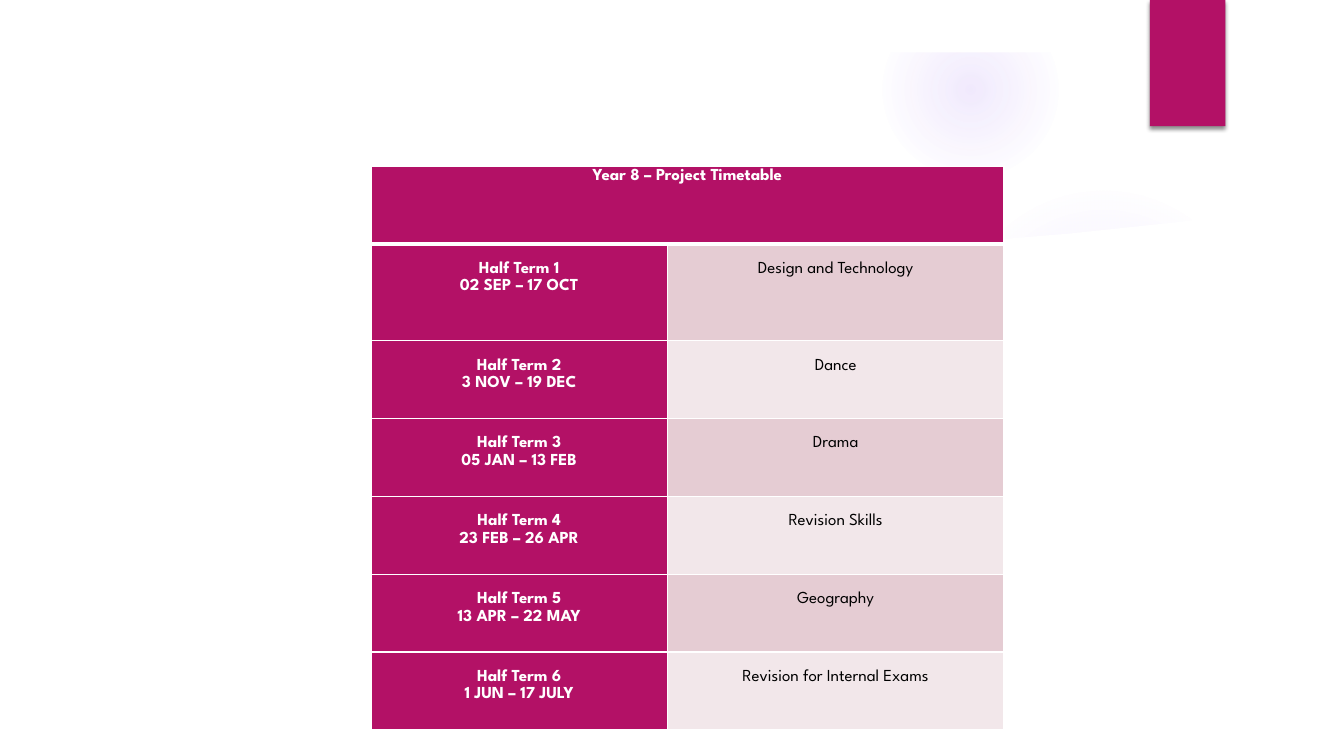
from dataclasses import dataclass

from pptx import Presentation
from pptx.dml.color import RGBColor as RGB
from pptx.enum.shapes import MSO_SHAPE as SHAPE
from pptx.enum.text import PP_ALIGN as ALIGN
from pptx.oxml import parse_xml
from pptx.oxml.ns import nsdecls
from pptx.util import Cm, Pt


@dataclass(frozen=True)
class Theme:
    font: str = "League Spartan"
    size: int = 12
    spacing: float = 1.15
    accent: str = "B31166"
    glow: str = "9B6BF2"
    white: str = "FFFFFF"
    black: str = "000000"
    bands: tuple = ("E5CCD3", "F2E7EA")


class TimetableSlide:
    def __init__(self, prs, theme):
        self.theme = theme
        self.slide = prs.slides.add_slide(prs.slide_layouts[6])
        self.shapes = self.slide.shapes

    def paint(self, s, color):
        s.shadow.inherit = False
        s.fill.solid()
        s.fill.fore_color.rgb = RGB.from_string(color)
        s.line.fill.background()
        return s

    def shape(self, kind, x, y, w, h, color):
        s = self.shapes.add_shape(kind, Cm(x), Cm(y), Cm(w), Cm(h))
        return self.paint(s, color)

    def glow(self, x, y, size, stops):
        s = self.shape(SHAPE.OVAL, x, y, size, size, self.theme.white)
        gs = "".join(
            f'<a:gs pos="{pos * 1000}"><a:srgbClr val="{self.theme.glow}">'
            f'<a:alpha val="{alpha * 1000}"/></a:srgbClr></a:gs>'
            for pos, alpha in stops
        )
        grad = parse_xml(
            f'<a:gradFill {nsdecls("a")}><a:gsLst>{gs}</a:gsLst><a:path path="circle">'
            '<a:fillToRect l="50000" t="50000" r="50000" b="50000"/></a:path></a:gradFill>'
        )
        solid = s.fill._xPr.solidFill
        solid.getparent().replace(solid, grad)

    def panel(self, points):
        start, *rest = [(Cm(x), Cm(y)) for x, y in points]
        builder = self.shapes.build_freeform(*start)
        builder.add_line_segments(rest)
        self.paint(builder.convert_to_shape(), self.theme.white)

    def frame(self, w, h, border):
        s = self.shape(SHAPE.FRAME, 0, 0, w, h, self.theme.white)
        s.adjustments[0] = border / min(w, h)

    def tab(self, x, y, w, h):
        s = self.shape(SHAPE.RECTANGLE, x, y, w, h, self.theme.accent)
        effects = s._element.spPr.find("{*}effectLst")
        effects.append(parse_xml(
            f'<a:outerShdw {nsdecls("a")} blurRad="{Pt(3)}" dist="{Pt(2)}" dir="5400000">'
            f'<a:srgbClr val="{self.theme.black}"><a:alpha val="45000"/></a:srgbClr></a:outerShdw>'
        ))

    def cell(self, cell, text, fill, color, bold, top=0.0, rules=(1, 1)):
        cell.fill.solid()
        cell.fill.fore_color.rgb = RGB.from_string(fill)
        cell.margin_left = cell.margin_right = Cm(0.17)
        cell.margin_top, cell.margin_bottom = Cm(top), 0
        tf = cell.text_frame
        tf.text = text
        for p in tf.paragraphs:
            p.alignment = ALIGN.CENTER
            p.line_spacing = self.theme.spacing
            for r in p.runs:
                r.font.name = self.theme.font
                r.font.size = Pt(self.theme.size)
                r.font.bold = bold
                r.font.color.rgb = RGB.from_string(color)
        tcPr = cell._tc.get_or_add_tcPr()
        for i, (side, width) in enumerate(zip("LRTB", (1, 1, *rules))):
            tcPr.insert(i, parse_xml(
                f'<a:ln{side} {nsdecls("a")} w="{Pt(width)}"><a:solidFill>'
                f'<a:srgbClr val="{self.theme.white}"/></a:solidFill></a:ln{side}>'
            ))

    def timetable(self, x, y, widths, heights, title, terms):
        t = self.theme
        table = self.shapes.add_table(
            len(heights), len(widths), Cm(x), Cm(y), Cm(sum(widths)), Cm(sum(heights))
        ).table
        for col, w in zip(table.columns, widths):
            col.width = Cm(w)
        for row, h in zip(table.rows, heights):
            row.height = Cm(h)
        table.cell(0, 0).merge(table.cell(0, 1))
        for c, text in enumerate((title, "")):
            self.cell(table.cell(0, c), text, t.accent, t.white, True, rules=(1, 3))
        for n, (dates, subject) in enumerate(terms, 1):
            rules = (3 if n == 1 else 1, 1)
            label = f"Half Term {n}\n{dates}"
            band = t.bands[(n - 1) % 2]
            self.cell(table.cell(n, 0), label, t.accent, t.white, True, 0.38, rules)
            self.cell(table.cell(n, 1), subject, band, t.black, False, 0.38, rules)


PANEL = [
    (1.27, 5.18), (5.49, 5.69), (10.19, 6.05), (14.81, 6.25), (17.98, 6.3),
    (21.34, 6.25), (24.1, 6.12), (26.92, 5.89), (29.77, 5.59), (32.61, 5.18),
    (32.61, 17.78), (1.27, 17.78),
]
TERMS = [
    ("02 SEP – 17 OCT", "Design and Technology"),
    ("3 NOV – 19 DEC", "Dance"),
    ("05 JAN – 13 FEB", "Drama"),
    ("23 FEB – 26 APR", "Revision Skills"),
    ("13 APR – 22 MAY", "Geography"),
    ("1 JUN – 17 JULY", "Revision for Internal Exams"),
]


def main():
    prs = Presentation()
    prs.slide_width, prs.slide_height = Cm(33.87), Cm(19.05)
    s = TimetableSlide(prs, Theme())
    s.glow(23.9, 4.65, 7.82, [(0, 7), (36, 6), (69, 0)])
    s.glow(22.23, 0.03, 4.45, [(0, 14), (36, 7), (73, 0)])
    s.panel(PANEL)
    s.frame(33.87, 19.05, 1.32)
    s.tab(28.98, 0, 1.9, 3.18)
    heights = [1.96, 2.44] + [1.96] * 5
    s.timetable(9.35, 4.19, [7.47, 8.48], heights, "Year 8 – Project Timetable", TERMS)
    prs.save("out.pptx")


if __name__ == "__main__":
    main()
